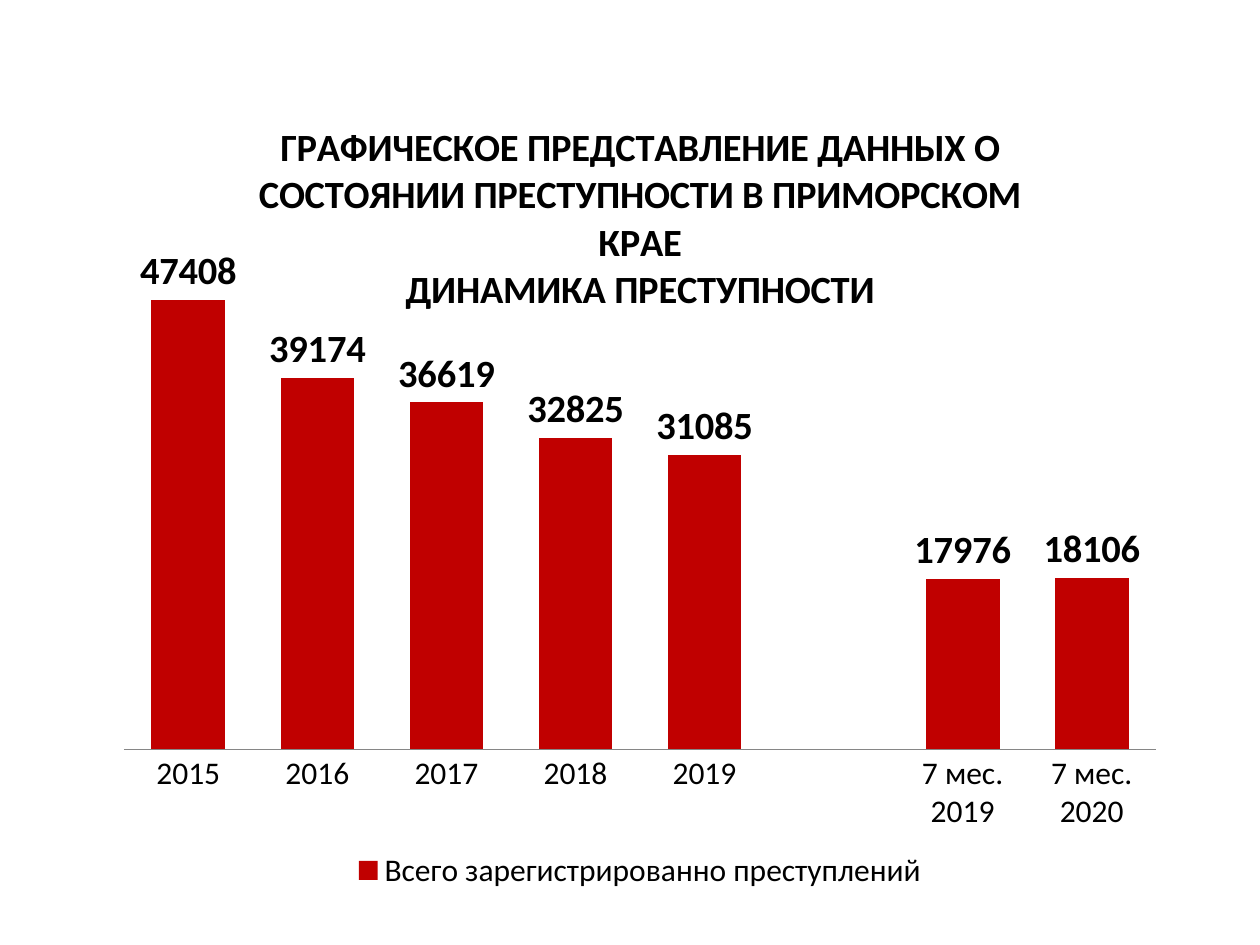
from dataclasses import dataclass

from lxml import etree
from pptx import Presentation
from pptx.chart.data import CategoryChartData
from pptx.dml.color import RGBColor
from pptx.enum import chart as ch
from pptx.oxml.ns import qn
from pptx.util import Inches, Pt


@dataclass(frozen=True)
class Theme:
    font: str = "Calibri"
    text: RGBColor = RGBColor(0, 0, 0)
    bar: RGBColor = RGBColor(0xC0, 0, 0)
    axis: RGBColor = RGBColor(0x86, 0x86, 0x86)
    body: int = 18
    strong: int = 22


THEME = Theme()
TITLE = [
    "ГРАФИЧЕСКОЕ ПРЕДСТАВЛЕНИЕ ДАННЫХ О СОСТОЯНИИ ПРЕСТУПНОСТИ В ПРИМОРСКОМ КРАЕ",
    "ДИНАМИКА ПРЕСТУПНОСТИ",
]
SERIES = "Всего зарегистрированно преступлений"
CRIMES = [
    ("2015", 47408), ("2016", 39174), ("2017", 36619), ("2018", 32825),
    ("2019", 31085), ("", None), ("7 мес. 2019", 17976), ("7 мес. 2020", 18106),
]


def style_font(font, size, bold=False):
    font.name = THEME.font
    font.size = Pt(size)
    font.bold = bold
    font.color.rgb = THEME.text


def add_title(chart):
    tf = chart.chart_title.text_frame
    tf.text = TITLE[0]
    tf.add_paragraph().text = TITLE[1]
    for p in tf.paragraphs:
        for r in p.runs:
            style_font(r.font, THEME.strong, bold=True)


def place_plot(chart, x, y, w, h):
    """Fix the inner plot area as fractions of the chart."""
    area = chart._chartSpace.chart.plotArea
    for old in area.findall(qn("c:layout")):
        area.remove(old)
    layout = etree.Element(qn("c:layout"))
    area.insert(0, layout)
    manual = etree.SubElement(layout, qn("c:manualLayout"))
    settings = [("layoutTarget", "inner"), ("xMode", "edge"), ("yMode", "edge"),
                ("x", x), ("y", y), ("w", w), ("h", h)]
    for tag, value in settings:
        etree.SubElement(manual, qn(f"c:{tag}")).set("val", str(value))


def style_axes(chart):
    cat, val = chart.category_axis, chart.value_axis
    cat.major_tick_mark = ch.XL_TICK_MARK.NONE
    cat.format.line.color.rgb = THEME.axis
    cat.format.line.width = Pt(0.75)
    style_font(cat.tick_labels.font, THEME.body)
    val.visible = False
    val.has_major_gridlines = False
    val.minimum_scale, val.maximum_scale = 0, 50000


def style_bars(plot):
    plot.gap_width = 75
    plot.vary_by_categories = False
    fill = plot.series[0].format.fill
    fill.solid()
    fill.fore_color.rgb = THEME.bar
    labels = plot.series[0].data_labels
    labels.show_value = True
    labels.position = ch.XL_LABEL_POSITION.OUTSIDE_END
    style_font(labels.font, THEME.strong, bold=True)


def add_legend(chart):
    chart.has_legend = True
    chart.legend.position = ch.XL_LEGEND_POSITION.BOTTOM
    chart.legend.include_in_layout = False
    style_font(chart.legend.font, THEME.body)


def add_crime_chart(s):
    names, values = zip(*CRIMES)
    data = CategoryChartData()
    data.categories = names
    data.add_series(SERIES, values)
    chart = s.shapes.add_chart(
        ch.XL_CHART_TYPE.COLUMN_CLUSTERED, Inches(0.83), Inches(0.76),
        Inches(8.5), Inches(6.35), data).chart
    style_font(chart.font, THEME.body)
    add_title(chart)
    style_axes(chart)
    style_bars(chart.plots[0])
    add_legend(chart)
    place_plot(chart, 0.018, 0.225, 0.964, 0.592)


def main():
    prs = Presentation()
    prs.slide_width, prs.slide_height = Inches(10), Inches(7.5)
    s = prs.slides.add_slide(prs.slide_layouts[6])
    add_crime_chart(s)
    prs.save("out.pptx")


if __name__ == "__main__":
    main()
